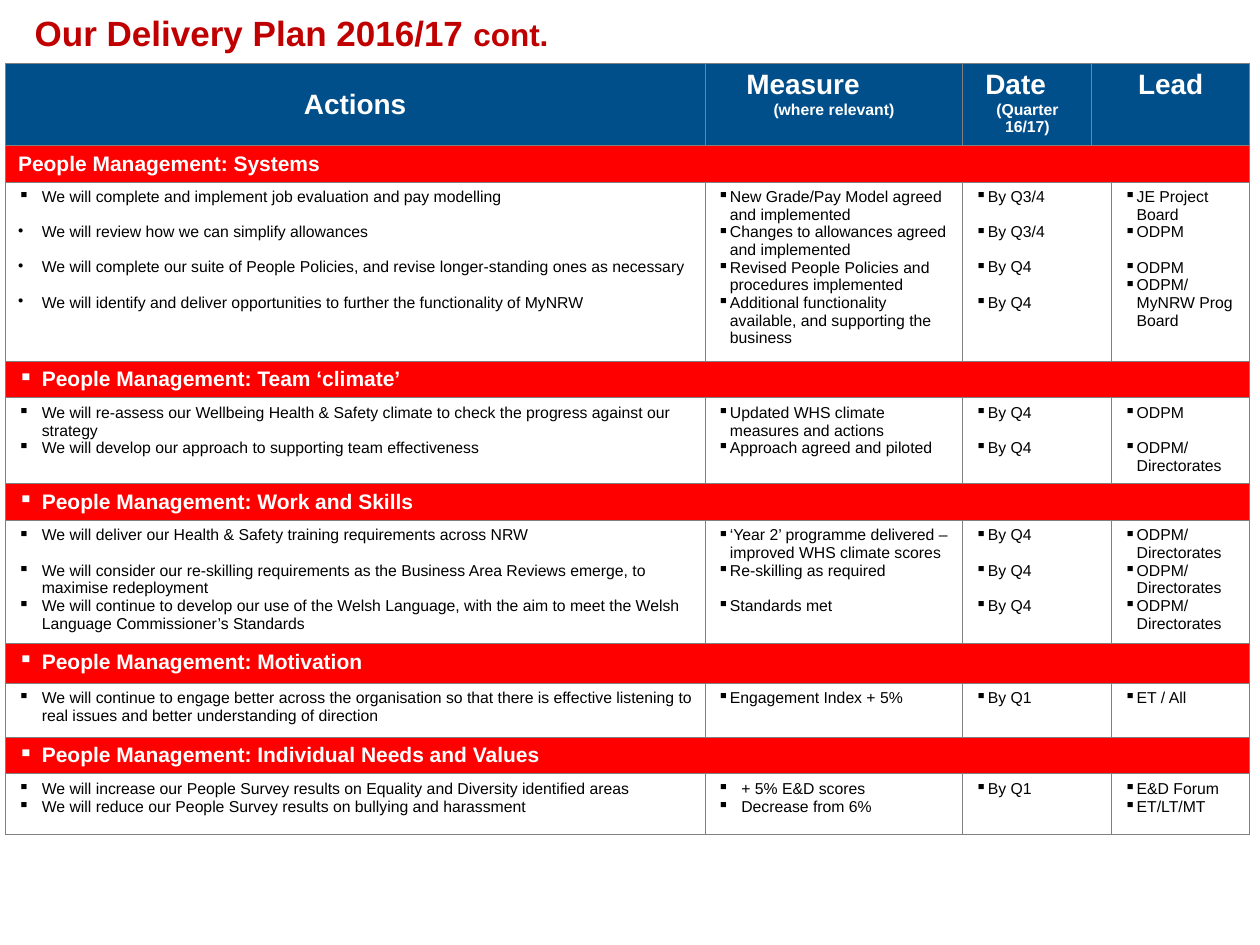
from typing import NamedTuple

from lxml import etree
from pptx import Presentation
from pptx.dml.color import RGBColor
from pptx.enum.text import MSO_ANCHOR, PP_ALIGN
from pptx.oxml.ns import qn
from pptx.util import Cm, Pt

TOP, MIDDLE = MSO_ANCHOR.TOP, MSO_ANCHOR.MIDDLE
LEFT, CENTER = PP_ALIGN.LEFT, PP_ALIGN.CENTER
TITLE_ONLY = 5
FONT = "Arial"
COLORS = {"title": "C00000", "header": "004F8A", "section": "FF0000",
          "white": "FFFFFF", "text": "000000", "border": "808080"}
WIDE, NARROW = 0.48, 0.25
LINE_GAP = Pt(10)
COLUMN_WIDTHS = [14.1, 5.2, 2.6, 0.4, 2.78]
ROW_HEIGHTS = [1.65, 0.74, 3.61, 0.74, 1.73, 0.74, 2.49, 0.79, 1.09, 0.74, 1.22]
# First and last grid column of each cell in a row
HEADER_SPANS = [(0, 0), (1, 1), (2, 2), (3, 4)]
BODY_SPANS = [(0, 0), (1, 1), (2, 3), (4, 4)]


class Item(NamedTuple):
    """A list entry; gap is true where one line stays free above it."""
    text: str
    gap: bool = False
    bullet: str = "▪"


def plain(*texts):
    return [Item(text) for text in texts]


def spaced(*texts, bullet="▪"):
    """Entries with a free line between them."""
    return [Item(text, index > 0, bullet if index else "▪")
            for index, text in enumerate(texts)]


# Section title, then actions, measures, dates and leads
SECTIONS = [
    ("People Management: Systems",
     spaced("We will complete and implement job evaluation and pay modelling",
            "We will review how we can simplify allowances",
            "We will complete our suite of People Policies, and revise "
            "longer-standing ones as necessary",
            "We will identify and deliver opportunities to further the "
            "functionality of MyNRW", bullet="•"),
     plain("New Grade/Pay Model agreed and implemented",
           "Changes to allowances agreed and implemented",
           "Revised People Policies and procedures implemented",
           "Additional functionality available, and supporting the business"),
     spaced("By Q3/4", "By Q3/4", "By Q4", "By Q4"),
     [Item("JE Project Board"), Item("ODPM"), Item("ODPM", True),
      Item("ODPM/ MyNRW Prog Board")]),
    ("People Management: Team ‘climate’",
     plain("We will re-assess our Wellbeing Health & Safety climate to check "
           "the progress against our strategy",
           "We will develop our approach to supporting team effectiveness"),
     plain("Updated WHS climate measures and actions",
           "Approach agreed and piloted"),
     spaced("By Q4", "By Q4"),
     spaced("ODPM", "ODPM/ Directorates")),
    ("People Management: Work and Skills",
     [Item("We will deliver our Health & Safety training requirements across NRW"),
      Item("We will consider our re-skilling requirements as the Business Area "
           "Reviews emerge, to maximise redeployment", True),
      Item("We will continue to develop our use of the Welsh Language, with the "
           "aim to meet the Welsh Language Commissioner’s Standards")],
     [Item("‘Year 2’ programme delivered – improved WHS climate scores"),
      Item("Re-skilling as required"), Item("Standards met", True)],
     spaced("By Q4", "By Q4", "By Q4"),
     plain(*["ODPM/ Directorates"] * 3)),
    ("People Management: Motivation",
     plain("We will continue to engage better across the organisation so that "
           "there is effective listening to real issues and better "
           "understanding of direction"),
     plain("Engagement Index + 5%"),
     plain("By Q1"),
     plain("ET / All")),
    ("People Management: Individual Needs and Values",
     plain("We will increase our People Survey results on Equality and "
           "Diversity identified areas",
           "We will reduce our People Survey results on bullying and harassment"),
     plain("+ 5% E&D scores", "Decrease from 6%"),
     plain("By Q1"),
     plain("E&D Forum", "ET/LT/MT")),
]
# Heading, left indent (None means centred) and small second line
HEADERS = [("Actions", None, ""), ("Measure", 0.58, "(where relevant)"),
           ("Date", 0.2, "(Quarter 16/17)"), ("Lead", None, "")]


def style_span(span, size, color, bold=False):
    span.font.name = FONT
    span.font.size = Pt(size)
    span.font.bold = bold
    span.font.color.rgb = RGBColor.from_string(COLORS[color])


def write_paragraph(para, text, size, color, bold=False, align=LEFT):
    para.text = text
    para.alignment = align
    style_span(para.runs[0], size, color, bold)


def indent(para, left, bullet=None):
    properties = para._p.get_or_add_pPr()
    properties.set("marL", str(Cm(left)))
    if bullet:
        properties.set("indent", str(-Cm(left)))
        etree.SubElement(properties, qn("a:buChar"), char=bullet)


def next_paragraph(frame, index):
    return frame.add_paragraph() if index else frame.paragraphs[0]


def add_borders(cell):
    properties = cell._tc.get_or_add_tcPr()
    for side in ("a:lnL", "a:lnR", "a:lnT", "a:lnB"):
        line = etree.SubElement(properties, qn(side), w=str(Pt(0.5)))
        fill = etree.SubElement(line, qn("a:solidFill"))
        etree.SubElement(fill, qn("a:srgbClr"), val=COLORS["border"])


def open_cell(table, row, first, last, fill, anchor=TOP):
    """Merge the grid cells from first to last and format them as one."""
    for column in range(first, last + 1):
        part = table.cell(row, column)
        add_borders(part)
        part.fill.solid()
        part.fill.fore_color.rgb = RGBColor.from_string(COLORS[fill])
    cell = table.cell(row, first)
    if last > first:
        cell.merge(table.cell(row, last))
    cell.vertical_anchor = anchor
    return cell.text_frame


def fill_header(table):
    for (first, last), (heading, left, note) in zip(HEADER_SPANS, HEADERS):
        frame = open_cell(table, 0, first, last, "header",
                          TOP if first else MIDDLE)
        para = frame.paragraphs[0]
        write_paragraph(para, heading, 16, "white", True,
                        CENTER if left is None else LEFT)
        if left is not None:
            indent(para, left)
        if note:
            write_paragraph(frame.add_paragraph(), note, 9, "white", True, CENTER)


def fill_section(table, row, title, bulleted):
    frame = open_cell(table, row, 0, 4, "section", TOP if bulleted else MIDDLE)
    para = frame.paragraphs[0]
    if bulleted:
        indent(para, WIDE, "▪")
    write_paragraph(para, title, 12, "white", True)


def fill_list(frame, items, left):
    for index, item in enumerate(items):
        para = next_paragraph(frame, index)
        indent(para, left, item.bullet)
        if item.gap:
            para.space_before = LINE_GAP
        write_paragraph(para, item.text, 9, "text")


def add_plan_table(page):
    shape = page.shapes.add_table(
        len(ROW_HEIGHTS), len(COLUMN_WIDTHS), Cm(0.11), Cm(1.28),
        Cm(sum(COLUMN_WIDTHS)), Cm(sum(ROW_HEIGHTS)))
    table = shape.table
    table.horz_banding = table.first_row = False
    for column, width in zip(table.columns, COLUMN_WIDTHS):
        column.width = Cm(width)
    for row, height in zip(table.rows, ROW_HEIGHTS):
        row.height = Cm(height)
    fill_header(table)
    for number, (title, *lists) in enumerate(SECTIONS):
        row = 1 + 2 * number
        fill_section(table, row, title, number > 0)
        last_section = number == len(SECTIONS) - 1
        for (first, last), items in zip(BODY_SPANS, lists):
            wide = first == 0 or (first == 1 and last_section)
            frame = open_cell(table, row + 1, first, last, "white")
            fill_list(frame, items, WIDE if wide else NARROW)


def set_title(page):
    title = page.shapes.title
    title.left, title.top, title.width, title.height = (
        Cm(0.7), Cm(0.05), Cm(12.8), Cm(1.22))
    frame = title.text_frame
    frame.margin_left = frame.margin_right = frame.margin_top = frame.margin_bottom = 0
    frame.vertical_anchor = MIDDLE
    para = frame.paragraphs[0]
    write_paragraph(para, "Our Delivery Plan 2016/17 ", 20, "title", True)
    span = para.add_run()
    span.text = "cont."
    style_span(span, 18, "title", True)


def main():
    deck = Presentation()
    deck.slide_width, deck.slide_height = Cm(25.4), Cm(19.05)
    page = deck.slides.add_slide(deck.slide_layouts[TITLE_ONLY])
    set_title(page)
    add_plan_table(page)
    deck.save("out.pptx")


if __name__ == "__main__":
    main()
